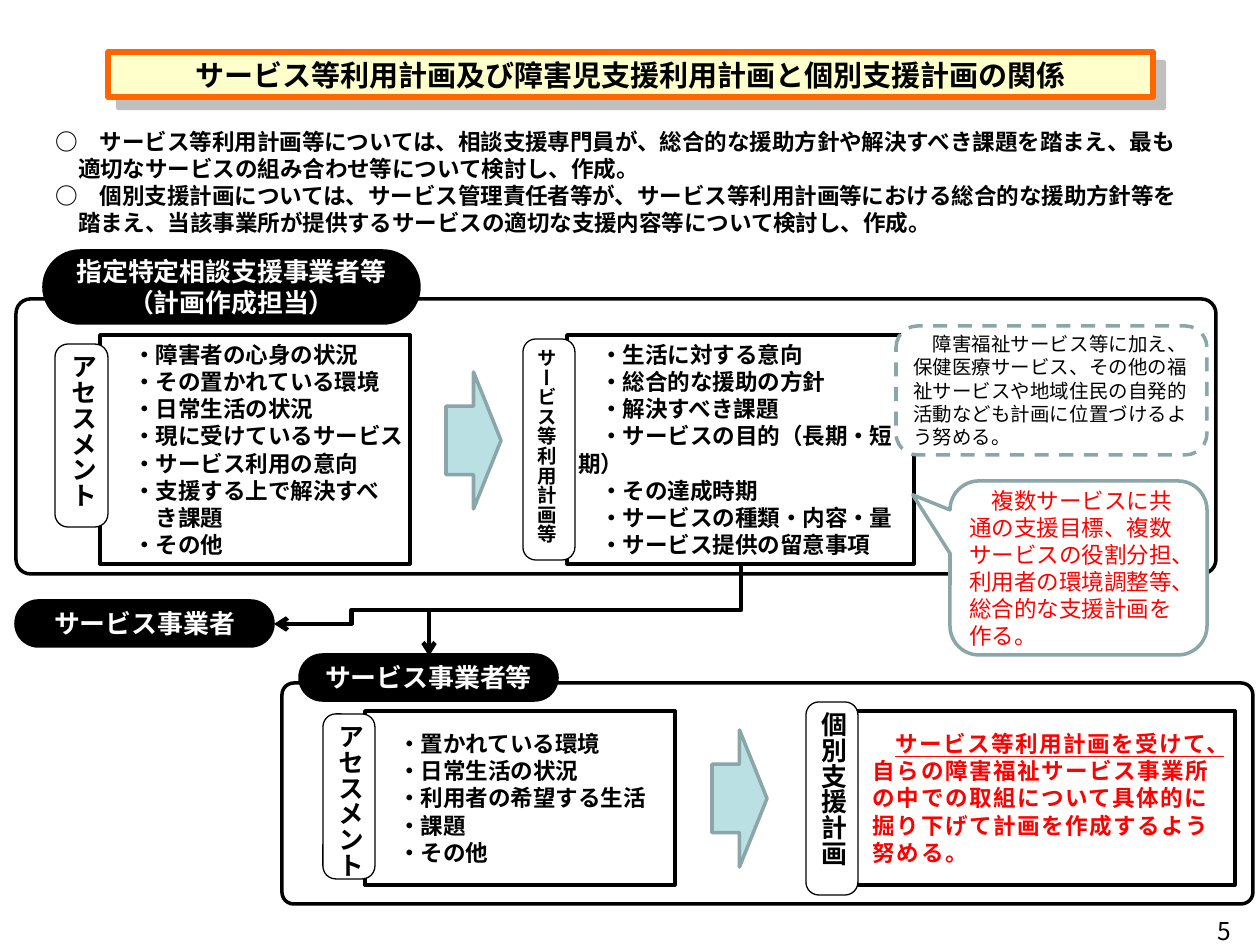
from lxml.etree import SubElement
from pptx import Presentation
from pptx.dml.color import RGBColor
from pptx.enum.dml import MSO_LINE
from pptx.enum.shapes import MSO_CONNECTOR, MSO_SHAPE
from pptx.enum.text import MSO_ANCHOR, MSO_AUTO_SIZE, PP_ALIGN
from pptx.oxml import parse_xml
from pptx.oxml.ns import nsdecls, qn
from pptx.util import Emu, Pt

PX = 914400 / 126
LATIN, JAPANESE = "Arial", "Noto Sans CJK JP"
BLACK, WHITE, RED = "000000", "FFFFFF", "FF0000"
TEAL, TEAL_LINE = "BBE0E3", "8AA6A8"
SPACE = "\u3000"


def px(*lengths):
    return [Emu(round(length * PX)) for length in lengths]


def color(value):
    return RGBColor.from_string(value)


def paint(shape, fill, line, width):
    if fill:
        shape.fill.solid()
        shape.fill.fore_color.rgb = color(fill)
    else:
        shape.fill.background()
    shape.line.color.rgb = color(line)
    shape.line.width = Pt(width)


def set_frame(shape, side=11, anchor=MSO_ANCHOR.MIDDLE, wrap=True):
    frame = shape.text_frame
    frame.auto_size = MSO_AUTO_SIZE.NONE
    frame.word_wrap = wrap
    frame.vertical_anchor = anchor
    frame.margin_left, frame.margin_right, frame.margin_top, frame.margin_bottom = px(side, side, 6, 6)
    return frame


def set_font(font, size, text_color=BLACK, bold=True, name=LATIN):
    font.name = name
    font.size = Pt(size)
    font.bold = bold
    font.color.rgb = color(text_color)


def write(frame, lines, size, text_color=BLACK, bold=True, name=LATIN, align=PP_ALIGN.LEFT):
    frame.text = "\n".join(lines)
    for paragraph in frame.paragraphs:
        paragraph.alignment = align
        set_font(paragraph.font, size, text_color, bold, name)


def add_box(slide, kind, place, fill=None, line=BLACK, width=2, adjustments=()):
    shape = slide.shapes.add_shape(kind, *px(*place))
    shape.shadow.inherit = False
    paint(shape, fill, line, width)
    for index, value in enumerate(adjustments):
        shape.adjustments[index] = value
    return shape


def add_panel(slide, place):
    add_box(slide, MSO_SHAPE.ROUNDED_RECTANGLE, place, adjustments=[0.053])


def add_pill(slide, place, text):
    pill = add_box(slide, MSO_SHAPE.ROUNDED_RECTANGLE, place, BLACK, adjustments=[0.5])
    write(set_frame(pill), [text], 14.8, WHITE, align=PP_ALIGN.CENTER)


def add_list(slide, place, items, right_margin=11):
    box = add_box(slide, MSO_SHAPE.RECTANGLE, place)
    frame = set_frame(box)
    frame.margin_right = px(right_margin)[0]
    write(frame, [SPACE + item for item in items], 12.9)
    for paragraph in frame.paragraphs:
        SubElement(paragraph._p.pPr.find(qn("a:defRPr")), qn("a:ea"), typeface=LATIN)


def add_tab(slide, place, text, size=14.8):
    tab = add_box(slide, MSO_SHAPE.ROUNDED_RECTANGLE, place, WHITE, width=0.75, adjustments=[0.247])
    frame = set_frame(tab, side=5, wrap=False)
    write(frame, [text], size, name=JAPANESE, align=PP_ALIGN.CENTER)
    frame.paragraphs[0].line_spacing = Pt(15.7)
    frame._txBody.bodyPr.set("vert", "eaVert")


def add_arrow(slide, left, top):
    add_box(slide, MSO_SHAPE.RIGHT_ARROW, (left, top, 55, 137), TEAL, TEAL_LINE)


def add_elbow(slide, begin, end, rotation=0):
    connector = slide.shapes.add_connector(MSO_CONNECTOR.ELBOW, *px(*begin, *end))
    connector.line.color.rgb = color(BLACK)
    connector.line.width = Pt(2.5)
    properties = connector._element.spPr
    SubElement(properties.find(qn("a:ln")), qn("a:tailEnd"), type="arrow")
    SubElement(properties, qn("a:effectLst"))
    if rotation:
        properties.find(qn("a:xfrm")).set("rot", str(rotation * 60000))


def place_shape(shape, place):
    shape.left, shape.top, shape.width, shape.height = px(*place)


def fill_title(title, text):
    place_shape(title, (108, 52, 1045, 45))
    properties = title._element.spPr
    properties.append(parse_xml(
        f'<a:prstGeom {nsdecls("a")} prst="rect"><a:avLst/></a:prstGeom>'))
    paint(title, "FFFFCC", "FF6600", 3)
    properties.append(parse_xml(
        f'<a:effectLst {nsdecls("a")}><a:outerShdw dist="107950" dir="2700000" algn="ctr" rotWithShape="0">'
        '<a:srgbClr val="808080"><a:alpha val="50000"/></a:srgbClr></a:outerShdw></a:effectLst>'))
    write(set_frame(title, side=13), [text], 16.6, name=JAPANESE, align=PP_ALIGN.CENTER)


def fill_intro(body, lines):
    place_shape(body, (44, 123, 1154, 118))
    write(set_frame(body), lines, 12.9)
    for paragraph in body.text_frame.paragraphs:
        paragraph.space_before = Pt(0)
        properties = paragraph._p.get_or_add_pPr()
        indent = px(23)[0]
        properties.set("marL", str(indent))
        properties.set("indent", str(-indent))
        properties.insert_element_before(
            parse_xml(f'<a:buNone {nsdecls("a")}/>'), "a:tabLst", "a:defRPr", "a:extLst")


def add_goal(slide, place, underlined, rest):
    box = add_box(slide, MSO_SHAPE.RECTANGLE, place)
    frame = set_frame(box)
    frame.margin_left = px(22)[0]
    paragraph = frame.paragraphs[0]
    paragraph.alignment = PP_ALIGN.LEFT
    set_font(paragraph.font, 12.9, RED)
    for text in (SPACE, underlined, rest):
        run = paragraph.add_run()
        run.text = text
        run.font.underline = text == underlined
        if text != SPACE:
            run._r.get_or_add_rPr().set("spc", "90")


def add_notes(slide):
    note = add_box(slide, MSO_SHAPE.ROUNDED_RECTANGLE, (896, 326, 311, 129), WHITE, TEAL_LINE)
    note.line.dash_style = MSO_LINE.DASH
    write(set_frame(note), [SPACE + "障害福祉サービス等に加え、保健医療サービス、その他の福祉サービスや地域住民の自発的活動なども計画に位置づけるよう努める。"],
          11.1, bold=False)
    callout = add_box(slide, MSO_SHAPE.ROUNDED_RECTANGULAR_CALLOUT, (950, 481, 257, 174),
                      WHITE, TEAL_LINE, adjustments=[-0.645, -0.42, 0.167])
    write(set_frame(callout), [SPACE + "複数サービスに共通の支援目標、複数サービスの役割分担、利用者の環境調整等、総合的な支援計画を作る。"],
          12.9, RED, bold=False)


def add_page_number(slide, number):
    box = slide.shapes.add_textbox(*px(950, 910, 294, 35))
    write(set_frame(box, side=13, anchor=MSO_ANCHOR.TOP), [number], 14,
          bold=False, name=JAPANESE, align=PP_ALIGN.RIGHT)


def main():
    presentation = Presentation()
    presentation.slide_width, presentation.slide_height = px(1260, 945)
    slide = presentation.slides.add_slide(presentation.slide_layouts[1])
    fill_title(slide.shapes.title, "サービス等利用計画及び障害児支援利用計画と個別支援計画の関係")
    fill_intro(slide.placeholders[1], [
        "○　サービス等利用計画等については、相談支援専門員が、総合的な援助方針や解決すべき課題を踏まえ、最も適切なサービスの組み合わせ等について検討し、作成。",
        "○　個別支援計画については、サービス管理責任者等が、サービス等利用計画等における総合的な援助方針等を踏まえ、当該事業所が提供するサービスの適切な支援内容等について検討し、作成。"])
    add_panel(slide, (16, 299, 1200, 275))
    add_pill(slide, (44, 251, 375, 72), "指定特定相談支援事業者等（計画作成担当）")
    add_panel(slide, (282, 683, 971, 221))
    add_pill(slide, (300, 655, 257, 45), "サービス事業者等")
    add_pill(slide, (16, 601, 257, 45), "サービス事業者")
    add_list(slide, (100, 335, 310, 229), [
        "・障害者の心身の状況", "・その置かれている環境", "・日常生活の状況", "・現に受けているサービス",
        "・サービス利用の意向", "・支援する上で解決すべ", SPACE + "き課題", "・その他"], right_margin=0)
    add_list(slide, (567, 335, 347, 229), [
        "・生活に対する意向", "・総合的な援助の方針", "・解決すべき課題", "・サービスの目的（長期・短期）",
        "・その達成時期", "・サービスの種類・内容・量", "・サービス提供の留意事項"])
    add_list(slide, (365, 711, 310, 174), [
        "・置かれている環境", "・日常生活の状況", "・利用者の希望する生活", "・課題", "・その他"])
    add_goal(slide, (851, 711, 384, 174), "サービス等利用計画を受けて、",
             "自らの障害福祉サービス事業所の中での取組について具体的に掘り下げて計画を作成するよう努める。")
    add_tab(slide, (55, 344, 53, 183), "アセスメント")
    add_tab(slide, (523, 339, 52, 221), "サービス等利用計画等", 11.1)
    add_tab(slide, (323, 714, 52, 165), "アセスメント")
    add_tab(slide, (806, 702, 52, 193), "個別支援計画")
    add_arrow(slide, 446, 372)
    add_arrow(slide, 712, 730)
    add_elbow(slide, (539, 454), (631, 766), rotation=90)
    add_elbow(slide, (429, 610), (274, 624))
    add_notes(slide)
    add_page_number(slide, "5")
    presentation.save("out.pptx")


if __name__ == "__main__":
    main()
